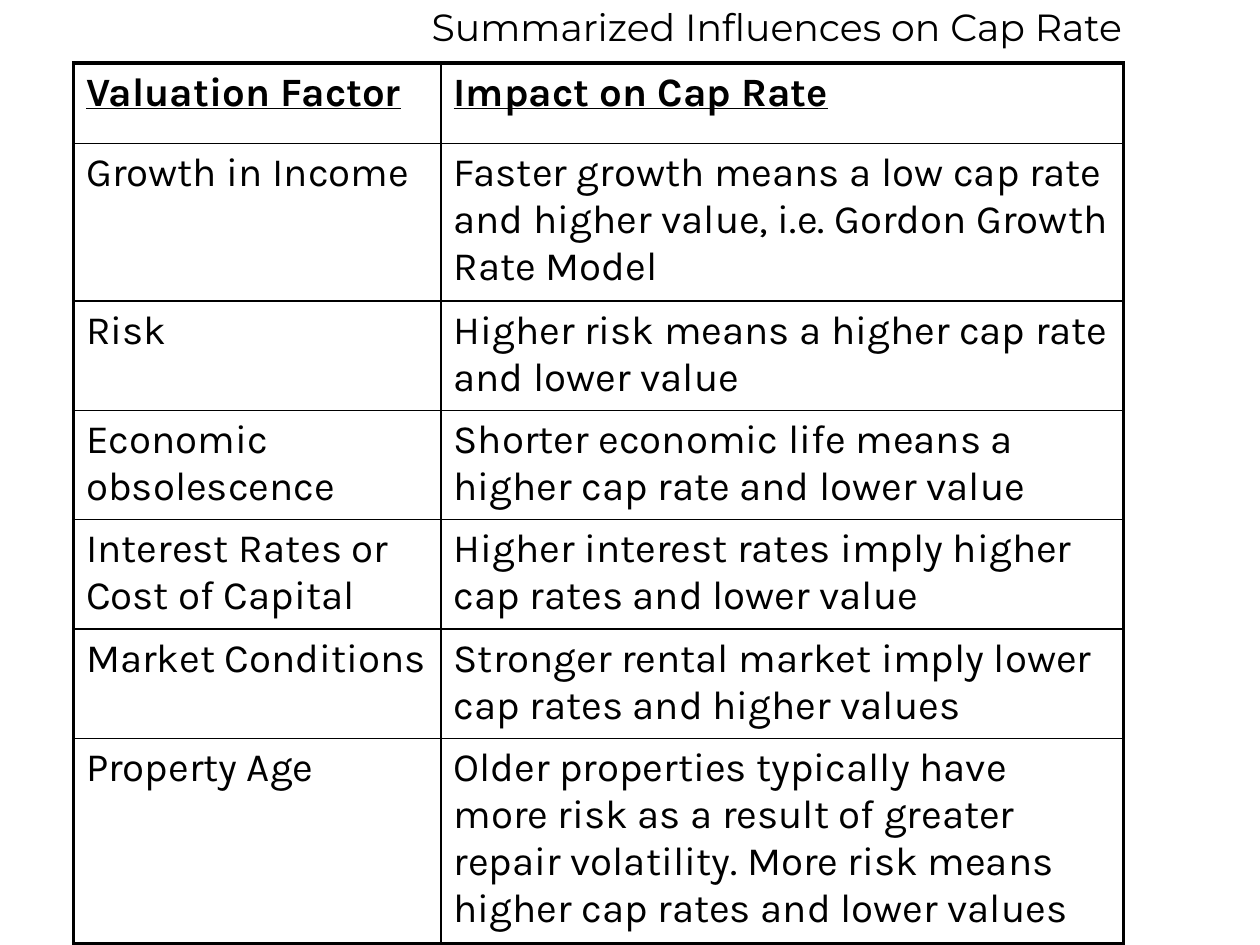
from pptx import Presentation
from pptx.dml.color import RGBColor as RGB
from pptx.enum.text import MSO_ANCHOR as Anchor, PP_ALIGN as Align
from pptx.oxml import parse_xml
from pptx.oxml.ns import nsdecls
from pptx.util import Pt

COLORS = {"ink": "000000"}
ROWS = [
    ("Valuation Factor", "Impact on Cap Rate"),
    ("Growth in Income", "Faster growth means a low cap rate and higher value, "
                         "i.e. Gordon Growth Rate Model"),
    ("Risk", "Higher risk means a higher cap rate and lower value"),
    ("Economic obsolescence", "Shorter economic life means a higher cap rate and lower value"),
    ("Interest Rates or Cost of Capital",
     "Higher interest rates imply higher cap rates and lower value"),
    ("Market Conditions", "Stronger rental market imply lower cap rates and higher values"),
    ("Property Age", "Older properties typically have more risk as a result of greater "
                     "repair volatility. More risk means higher cap rates and lower values"),
]
COL_WIDTHS = [210, 390]
ROW_HEIGHTS = [46, 90, 62.5, 62.5, 62.5, 62.5, 117.4]


class SlideBuilder:
    """Holds the style and the slide, and adds titles and tables to it."""

    title_font, body_font = "Montserrat", "Karla"
    title_size, body_size = 21.6, 23
    outer, inner = 2.25, 1

    def __init__(self, s):
        self.s = s

    def set_text(self, tf, text, font, size, align, header=False):
        tf.word_wrap = True
        p = tf.paragraphs[0]
        p.text, p.alignment = text, align
        p.font.name, p.font.size = font, Pt(size)
        p.font.bold = p.font.underline = header
        p.font.color.rgb = RGB.from_string(COLORS["ink"])

    def title(self, text, left, top, width, height):
        sp = self.s.shapes.add_textbox(Pt(left), Pt(top), Pt(width), Pt(height))
        tf = sp.text_frame
        tf.vertical_anchor = Anchor.MIDDLE
        tf.margin_top = tf.margin_bottom = 0
        self.set_text(tf, text, self.title_font, self.title_size, Align.CENTER)

    def border(self, cell, side, width):
        cell._tc.get_or_add_tcPr().append(parse_xml(
            f'<a:ln{side} {nsdecls("a")} w="{Pt(width)}"><a:solidFill>'
            f'<a:srgbClr val="{COLORS["ink"]}"/></a:solidFill></a:ln{side}>'))

    def table(self, rows, left, top, widths, heights):
        table = self.s.shapes.add_table(
            len(rows), len(widths), Pt(left), Pt(top),
            Pt(sum(widths)), Pt(sum(heights))).table
        table.first_row = table.horz_banding = False
        for col, width in zip(table.columns, widths):
            col.width = Pt(width)
        for i, (row, height) in enumerate(zip(rows, heights)):
            table.rows[i].height = Pt(height)
            for j, text in enumerate(row):
                cell = table.cell(i, j)
                self.set_text(cell.text_frame, text, self.body_font, self.body_size,
                              Align.LEFT, header=i == 0)
                edges = {"L": j == 0, "R": j == len(widths) - 1,
                         "T": i == 0, "B": i == len(rows) - 1}
                for side, is_outer in edges.items():
                    self.border(cell, side, self.outer if is_outer else self.inner)
                cell.fill.background()


def main():
    prs = Presentation()
    prs.slide_width, prs.slide_height = Pt(720), Pt(540)
    builder = SlideBuilder(prs.slides.add_slide(prs.slide_layouts[6]))
    builder.title("Summarized Influences on Cap Rate", 138, 0, 612, 30)
    builder.table(ROWS, 42, 36, COL_WIDTHS, ROW_HEIGHTS)
    prs.save("out.pptx")


if __name__ == "__main__":
    main()
